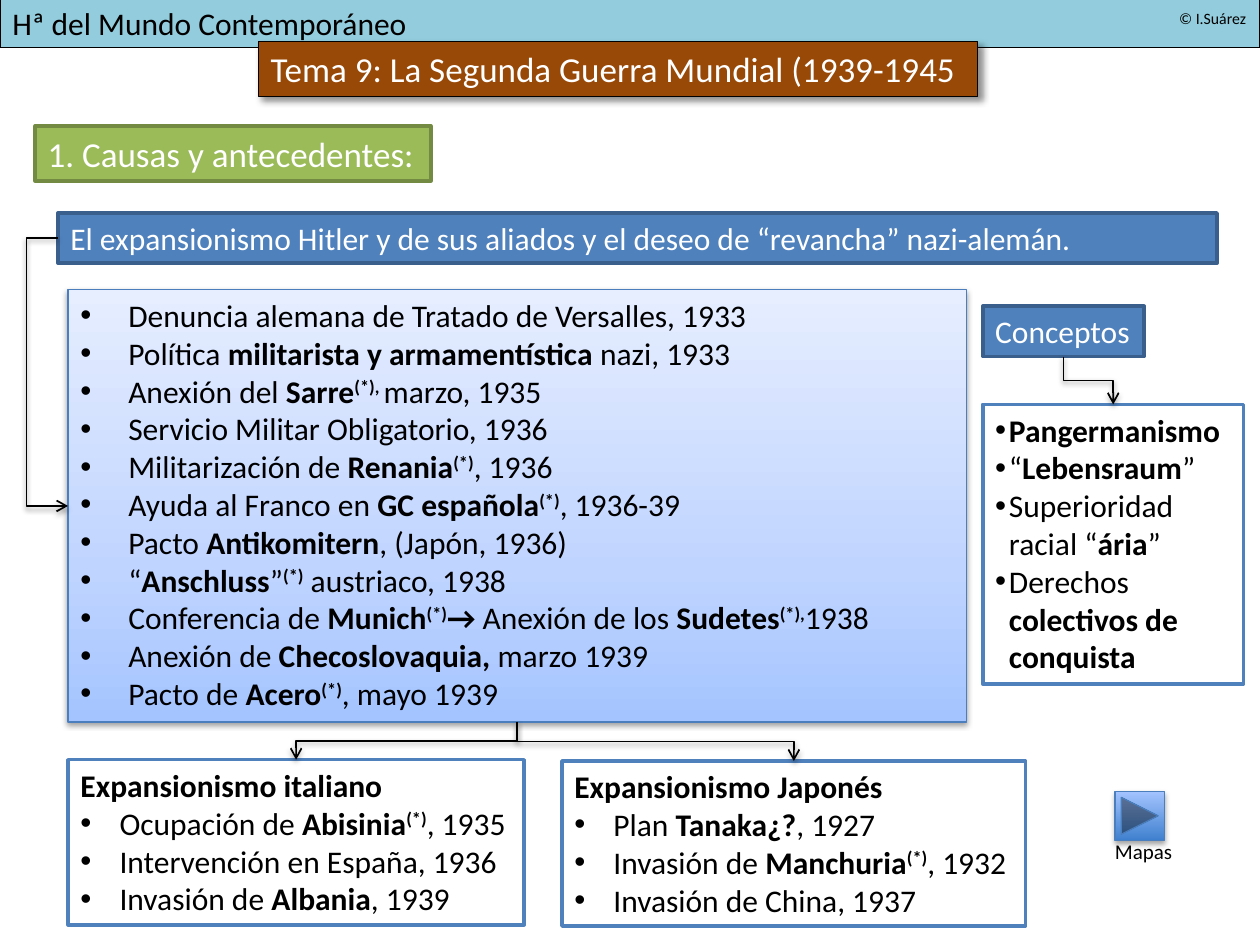
import pptx
import pptx.util
import pptx.dml.color
import pptx.enum.shapes
import pptx.enum.text
import pptx.oxml.ns
from lxml import etree

WIDE, HIGH = 10, 7.5
FONT = "Calibri"
COLORS = {
    "black": "000000", "white": "FFFFFF", "aqua": "93CDDD", "brown": "984807",
    "green": "9BBB59", "moss": "738A42", "blue": "4F81BD", "navy": "3A5F8C",
    "edge": "4B7EBC", "sky": "A4C4FF", "pale": "BFD4FF", "mist": "E6EEFF",
    "deep": "3F80CE",
}
# Shadow: opacity %, blur pt, distance pt, angle
SOFT = (38, 3.1, 1.6, 90)

# In a line, "|" parts the runs; "#" starts a bold run, "^" a raised one.
FACTS = [
    "Denuncia alemana de Tratado de Versalles, 1933",
    "Política |#militarista y armamentística |nazi, 1933",
    "Anexión del |#Sarre|^(*), |marzo, 1935",
    "Servicio Militar Obligatorio, 1936",
    "Militarización de |#Renania|^(*)|, 1936",
    "Ayuda al Franco en |#GC española|^(*)|, 1936-39",
    "Pacto |#Antikomitern|, (Japón, 1936)",
    "“|#Anschluss|”|^(*)| austriaco, 1938",
    "Conferencia de |#Munich|^(*)|#→ |Anexión de los |#Sudetes|^(*),|1938",
    "Anexión de |#Checoslovaquia, |marzo 1939",
    "Pacto de |#Acero|^(*)|, mayo 1939",
]
IDEAS = ["#Pangermanismo", "“|#Lebensraum|”", "Superioridad racial “|#ária|”",
         "Derechos |#colectivos de conquista"]
ITALY = ["#Expansionismo italiano", "Ocupación de |#Abisinia|^(*)|, 1935",
         "Intervención en España, 1936", "Invasión de |#Albania|, 1939"]
JAPAN = ["#Expansionismo Japonés", "Plan |#Tanaka¿?|, 1927",
         "Invasión de |#Manchuria|^(*)|, 1932", "Invasión de China, 1937"]

# Places are left, top, width, height in percent of the slide.
PANEL = dict(fill="white", line="blue", weight=2)
LABEL = dict(fill="blue", line="navy", weight=2, ink="white")
BOXES = {
    "header": dict(at=(0, -0.27, 100, 5.33), lines=["Hª del Mundo Contemporáneo"],
                   fill="aqua", line="black"),
    "title": dict(at=(20.5, 4.4, 57.1, 5.83), size=20, ink="white",
                  lines=["Tema 9: La Segunda Guerra Mundial (1939-1945"],
                  fill="brown", line="black", shade=(43, 4, 3, 45)),
    "credit": dict(at=(92.6, 0.27, 7.4, 3.33), lines=["© I.Suárez"], size=9, wrap=False),
    "cause": dict(at=(2.8, 13.33, 31.4, 5.83), lines=["1. Causas y antecedentes:"],
                  size=20, ink="white", fill="green", line="moss", weight=2, wrap=False),
    "facts": dict(at=(5.4, 30.67, 71.3, 45.73), lines=FACTS, indent=0.38, line="edge",
                  grade=[(0, "sky"), (35, "pale"), (100, "mist")], shade=SOFT),
    "thesis": dict(LABEL, at=(4.6, 22.53, 92, 5.33), lines=[
        "El expansionismo Hitler y de sus aliados y el deseo de “revancha” nazi-alemán."]),
    "ideas": dict(PANEL, at=(78, 42.8, 20.7, 29.6), lines=IDEAS, indent=0.11),
    "italy": dict(PANEL, at=(5.4, 80.4, 36.2, 17.47), lines=ITALY, indent=0.31,
                  plain=1, wrap=False),
    "japan": dict(PANEL, at=(44.6, 80.53, 36.8, 17.47), lines=JAPAN, indent=0.31,
                  plain=1, wrap=False),
    "concepts": dict(LABEL, at=(78, 32.4, 12.8, 5.33), lines=["Conceptos"], wrap=False),
    "next": dict(at=(88.5, 83.73, 3.9, 5.2), line="edge", shade=(35, 3.1, 1.8, 90),
                 grade=[(0, "deep"), (100, "sky")], kind="ACTION_BUTTON_FORWARD_OR_NEXT"),
    "maps": dict(at=(87.5, 88.13, 6.6, 4), lines=["Mapas"], size=12, wrap=False),
}
DROPS = [("concepts", "ideas"), ("facts", "italy"), ("facts", "japan")]

inch = pptx.util.Inches
qn = pptx.oxml.ns.qn


def color(name):
    return pptx.dml.color.RGBColor.from_string(COLORS[name])


def place(name):
    x, y, w, h = BOXES[name]["at"]
    return x * WIDE / 100, y * HIGH / 100, w * WIDE / 100, h * HIGH / 100


def node(up, tag, **attrs):
    """Add a DrawingML child element."""
    return etree.SubElement(up, qn("a:" + tag), {k: str(v) for k, v in attrs.items()})


def tint(up, name, alpha=None):
    part = node(up, "srgbClr", val=COLORS[name])
    if alpha:
        node(part, "alpha", val=alpha * 1000)


def shadow(props, shade):
    found = props.find(qn("a:effectLst"))
    host = node(props, "effectLst") if found is None else found
    if shade:
        alpha, blur, dist, turn = shade
        part = node(host, "outerShdw", blurRad=int(blur * 12700), dist=int(dist * 12700),
                    dir=turn * 60000, rotWithShape=0)
        tint(part, "black", alpha)


def paint(shape, form):
    shape.shadow.inherit = False
    props = shape._element.spPr
    if "grade" in form:
        shape.fill.gradient()
        shape.fill.gradient_angle = 90
        stops = props.find(qn("a:gradFill")).find(qn("a:gsLst"))
        for old in list(stops):
            stops.remove(old)
        for pos, name in form["grade"]:
            tint(node(stops, "gs", pos=pos * 1000), name)
    elif "fill" in form:
        shape.fill.solid()
        shape.fill.fore_color.rgb = color(form["fill"])
    if "line" in form:
        shape.line.color.rgb = color(form["line"])
        shape.line.width = pptx.util.Pt(form.get("weight", 0.75))
    shadow(props, form.get("shade"))


def write(frame, form):
    text = pptx.enum.text
    setup = dict(word_wrap=form.get("wrap", True), auto_size=text.MSO_AUTO_SIZE.SHAPE_TO_FIT_TEXT,
                 vertical_anchor=text.MSO_ANCHOR.TOP)
    for key, val in setup.items():
        setattr(frame, key, val)
    for i, line in enumerate(form["lines"]):
        para = frame.paragraphs[0] if i == 0 else frame.add_paragraph()
        para.alignment = text.PP_ALIGN.LEFT
        if "indent" in form and i >= form.get("plain", 0):
            props = para._p.get_or_add_pPr()
            props.set("marL", str(inch(form["indent"])))
            props.set("indent", str(-inch(form["indent"])))
            node(props, "buFont", typeface="Arial")
            node(props, "buChar", char="•")
        for part in line.split("|"):
            run = para.add_run()
            run.text = part.lstrip("#^")
            look = dict(name=FONT, size=pptx.util.Pt(form.get("size", 18)),
                        bold=part[0] in "#^")
            for key, val in look.items():
                setattr(run.font, key, val)
            run.font.color.rgb = color(form.get("ink", "black"))
            if part[0] == "^":
                run._r.get_or_add_rPr().set("baseline", "30000")


def arrow(shapes, ends, turn=0, bend=0.5):
    """Draw an elbow arrow; turn is its rotation, bend the place of its middle leg."""
    kind = pptx.enum.shapes.MSO_CONNECTOR.ELBOW
    line = shapes.add_connector(kind, *[inch(v) for v in ends])
    line.line.color.rgb = color("black")
    line.line.width = pptx.util.Pt(1)
    props = line._element.spPr
    props.find(qn("a:xfrm")).set("rot", str(turn * 60000))
    geom = props.find(qn("a:prstGeom"))
    for old in list(geom):
        geom.remove(old)
    node(node(geom, "avLst"), "gd", name="adj1", fmla=f"val {round(bend * 100000)}")
    node(line.line._get_or_add_ln(), "tailEnd", type="arrow")
    shadow(props, SOFT)


def drop(shapes, top, low):
    """Join the foot of one box to the head of a lower one, leaving downwards."""
    x, y, w, h = place(top)
    left, end, wide, _ = place(low)
    start, foot, goal = x + w / 2, y + h, left + wide / 2
    midx, midy = (start + goal) / 2, (foot + end) / 2
    run, rise = (end - foot) / 2, abs(goal - start) / 2
    side = 1 if goal > start else -1
    ends = (midx + side * run, midy - rise, midx - side * run, midy + rise)
    arrow(shapes, ends, 270 if side > 0 else 90)


def main():
    deck = pptx.Presentation()
    deck.slide_width, deck.slide_height = inch(WIDE), inch(HIGH)
    shapes = deck.slides.add_slide(deck.slide_layouts[6]).shapes
    for name, form in BOXES.items():
        spot = [inch(v) for v in place(name)]
        if "line" in form:
            kind = getattr(pptx.enum.shapes.MSO_SHAPE, form.get("kind", "RECTANGLE"))
            shape = shapes.add_shape(kind, *spot)
            paint(shape, form)
        else:
            shape = shapes.add_textbox(*spot)
        if "lines" in form:
            write(shape.text_frame, form)
    x, y, _, h = place("thesis")
    left, top, _, high = place("facts")
    arrow(shapes, (x, y + h / 2, left, top + high / 2), bend=-0.25 / (left - x))
    for top, low in DROPS:
        drop(shapes, top, low)
    deck.save("out.pptx")


if __name__ == "__main__":
    main()
